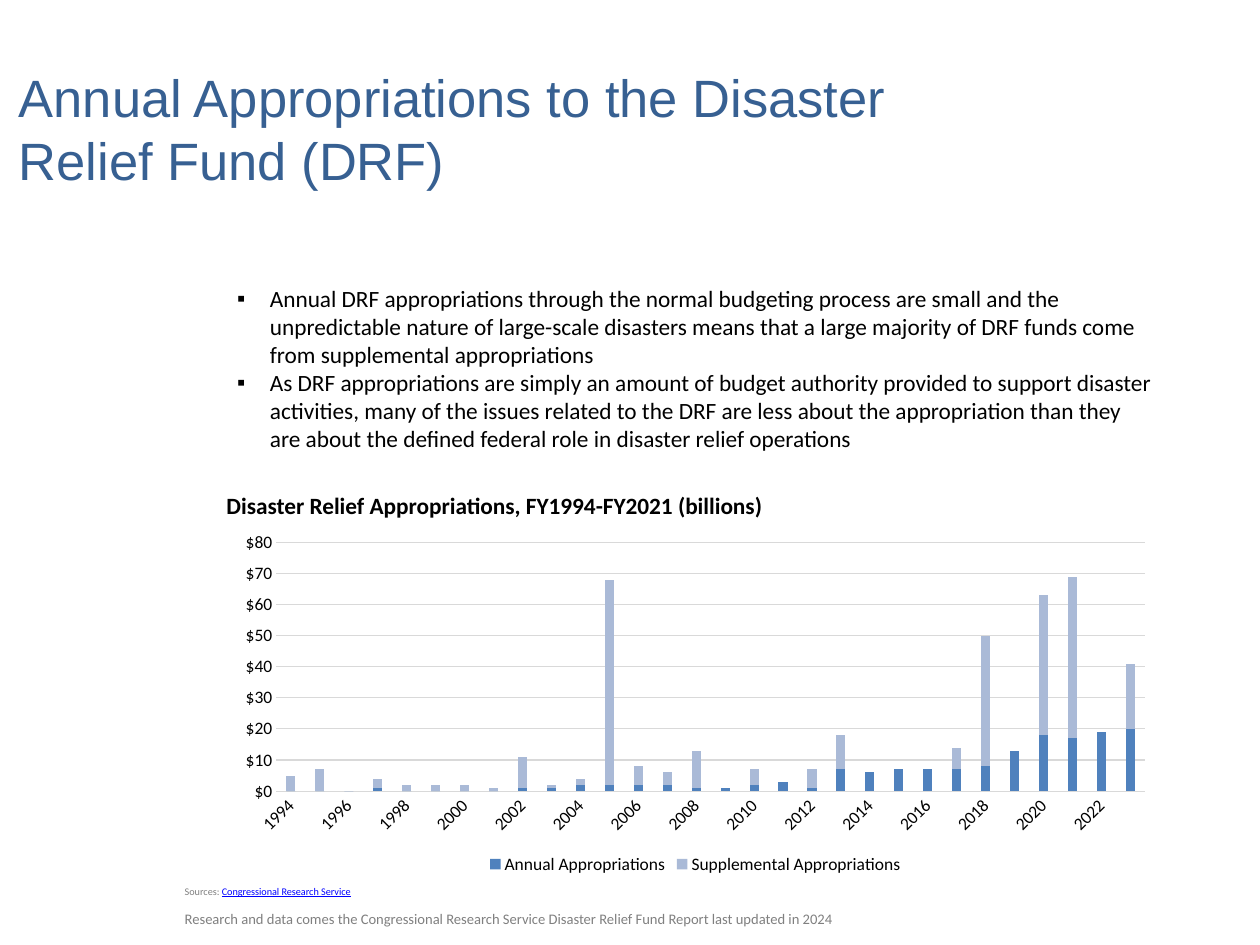
"""Build the slide on yearly appropriations to the Disaster Relief Fund."""
from dataclasses import dataclass
from typing import Any

from lxml import etree
from pptx import Presentation
from pptx.chart.data import CategoryChartData
from pptx.dml.color import RGBColor
from pptx.enum.chart import XL_CHART_TYPE, XL_LEGEND_POSITION, XL_TICK_MARK
from pptx.enum.text import MSO_ANCHOR, MSO_AUTO_SIZE, PP_ALIGN
from pptx.oxml.ns import qn
from pptx.util import Cm, Pt

STACKED = XL_CHART_TYPE.COLUMN_STACKED
BOTTOM = XL_LEGEND_POSITION.BOTTOM
NO_TICK = XL_TICK_MARK.NONE
MIDDLE = MSO_ANCHOR.MIDDLE
NO_FIT = MSO_AUTO_SIZE.NONE
LEFT = PP_ALIGN.LEFT

BLACK, GREY, PALE = "000000", "808080", "D9D9D9"
NAVY, LINK = "376092", "0000FF"


@dataclass
class Run:
    """One stretch of evenly formatted text."""
    text: str
    size: float
    color: str = BLACK
    bold: bool = False
    line: bool = False
    face: str = "Calibri"


@dataclass
class Block:
    """A text box: place in cm, and paragraphs of runs."""
    box: tuple[float, float, float, float]
    paras: list[list[Run]]
    bullet: bool = False
    space: float = 1.0


@dataclass
class Series:
    """A named row of chart values in billions."""
    name: str
    color: str
    vals: list[int]


TITLE = Run("Annual Appropriations to the Disaster Relief Fund (DRF)",
            36, NAVY, face="Arial")
BLOCKS = [
    Block((5.49, 6.76, 22.66, 4.37), [
        [Run("Annual DRF appropriations through the normal budgeting process "
             "are small and the unpredictable nature of large-scale disasters "
             "means that a large majority of DRF funds come from supplemental "
             "appropriations", 16)],
        [Run("As DRF appropriations are simply an amount of budget authority "
             "provided to support disaster activities, many of the issues "
             "related to the DRF are less about the appropriation than they "
             "are about the defined federal role in disaster relief "
             "operations", 16)],
    ], bullet=True),
    Block((5.23, 11.76, 17.75, 0.94), [
        [Run("Disaster Relief Appropriations, FY1994-FY2021 (billions)",
             16, bold=True)]]),
    Block((4.22, 21.26, 22.91, 0.53), [
        [Run("Sources: ", 7, GREY),
         Run("Congressional Research Service", 7, LINK, line=True)]],
        space=1.1),
    Block((4.22, 21.89, 19.86, 0.69), [
        [Run("Research and data comes the Congressional Research Service "
             "Disaster Relief Fund Report last updated in 2024", 10, GREY)]]),
]
YEARS = [str(year) for year in range(1994, 2024)]
SERIES = [
    Series("Annual Appropriations", "4F81BD",
           [0, 0, 0, 1, 0, 0, 0, 0, 1, 1, 2, 2, 2, 2, 1,
            1, 2, 3, 1, 7, 6, 7, 7, 7, 8, 13, 18, 17, 19, 20]),
    Series("Supplemental Appropriations", "AABAD7",
           [5, 7, 0, 3, 2, 2, 2, 1, 10, 1, 2, 66, 6, 4, 12,
            0, 5, 0, 6, 11, 0, 0, 0, 7, 42, 0, 45, 52, 0, 21]),
]


def paint(code: str) -> RGBColor:
    """Turn a hex string into a colour."""
    return RGBColor.from_string(code)


def style(font: Any, size: float, color: str, face: str = "Calibri") -> None:
    """Set size, colour and face of a font."""
    font.size, font.name = Pt(size), face
    font.color.rgb = paint(color)


def add_run(para: Any, item: Run) -> None:
    """Append a run to a paragraph."""
    run = para.add_run()
    run.text = item.text
    style(run.font, item.size, item.color, item.face)
    run.font.bold, run.font.underline = item.bold, item.line


def add_bullet(para: Any) -> None:
    """Give a paragraph a square bullet and a hanging indent."""
    props = para._p.get_or_add_pPr()
    props.set("marL", str(Cm(0.79)))
    props.set("indent", str(-Cm(0.79)))
    etree.SubElement(props, qn("a:buFont")).set("typeface", "Arial")
    etree.SubElement(props, qn("a:buChar")).set("char", "▪")


def add_block(slide: Any, block: Block) -> None:
    """Draw a text box."""
    frame = slide.shapes.add_textbox(*map(Cm, block.box)).text_frame
    frame.word_wrap = True
    for pos, runs in enumerate(block.paras):
        para = frame.add_paragraph() if pos else frame.paragraphs[0]
        para.line_spacing = block.space
        if block.bullet:
            add_bullet(para)
        for item in runs:
            add_run(para, item)


def set_title(slide: Any) -> None:
    """Place and fill the title."""
    title = slide.shapes.title
    title.left, title.top, title.width, title.height = map(
        Cm, (0.2, 0.81, 22.86, 4.57))
    frame = title.text_frame
    frame.auto_size, frame.vertical_anchor = NO_FIT, MIDDLE
    frame.word_wrap = True
    frame.paragraphs[0].alignment = LEFT
    add_run(frame.paragraphs[0], TITLE)


def set_axes(chart: Any) -> None:
    """Format both axes of the chart."""
    years, money = chart.category_axis, chart.value_axis
    for axis in (years, money):
        axis.major_tick_mark = axis.minor_tick_mark = NO_TICK
        style(axis.tick_labels.font, 12, BLACK)
    money.minimum_scale, money.maximum_scale, money.major_unit = 0, 80, 10
    money.tick_labels.number_format = '"$"#,##0'
    money.tick_labels.number_format_is_linked = False
    money.format.line.fill.background()
    for line in (years.format.line, money.major_gridlines.format.line):
        line.color.rgb, line.width = paint(PALE), Pt(0.75)
    node = years._element
    node.find(qn("c:txPr")).find(qn("a:bodyPr")).set("rot", "-2700000")
    skip = etree.Element(qn("c:tickLblSkip"))
    skip.set("val", "2")
    node.find(qn("c:noMultiLvlLbl")).addprevious(skip)


def add_graph(slide: Any) -> None:
    """Draw the stacked column chart."""
    data = CategoryChartData()
    data.categories = YEARS
    for row in SERIES:
        data.add_series(row.name, row.vals)
    box = map(Cm, (5.49, 12.7, 22.66, 8.56))
    chart = slide.shapes.add_chart(STACKED, *box, data).chart
    style(chart.font, 10, BLACK)
    chart.has_title = False
    chart.has_legend = True
    chart.legend.position = BOTTOM
    chart.legend.include_in_layout = False
    style(chart.legend.font, 12, BLACK)
    plot = chart.plots[0]
    plot.gap_width, plot.overlap = 219, 100
    plot.vary_by_categories = False
    for bars, row in zip(plot.series, SERIES):
        bars.format.fill.solid()
        bars.format.fill.fore_color.rgb = paint(row.color)
    set_axes(chart)


def main() -> None:
    """Build and save the slide."""
    deck = Presentation()
    deck.slide_width, deck.slide_height = Cm(30.48), Cm(22.86)
    slide = deck.slides.add_slide(deck.slide_layouts[5])
    set_title(slide)
    add_graph(slide)
    for block in BLOCKS:
        add_block(slide, block)
    deck.save("out.pptx")


if __name__ == "__main__":
    main()
